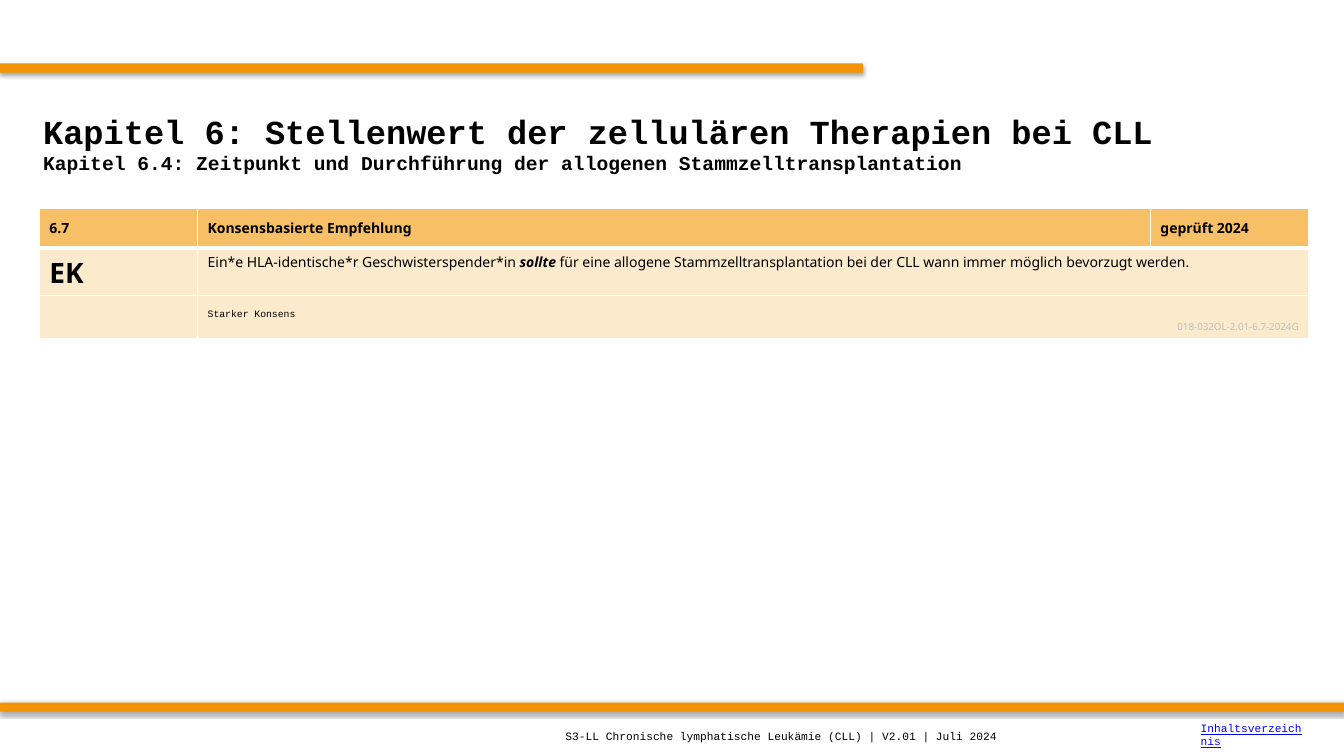
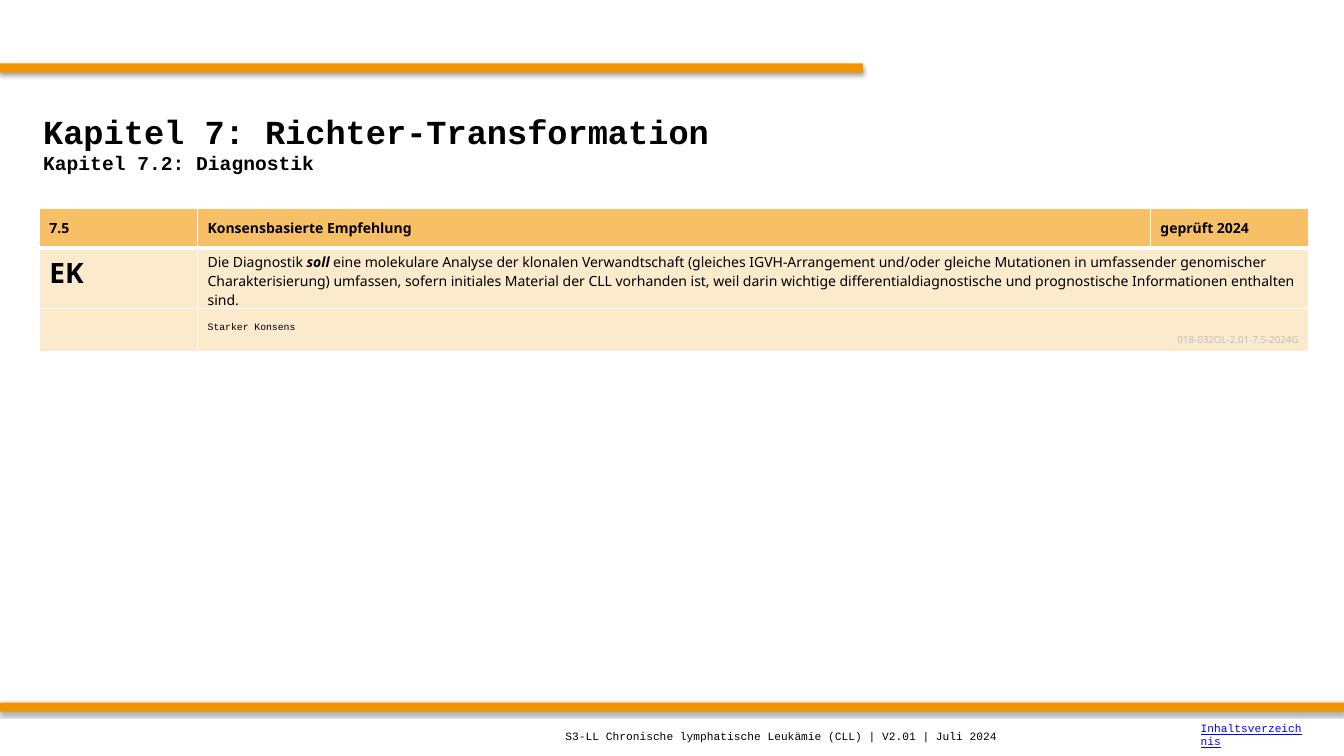
from dataclasses import dataclass, field
from typing import Any

import pptx
import pptx.dml.color
import pptx.enum.shapes
import pptx.enum.text
import pptx.oxml
import pptx.oxml.ns
import pptx.util

Inches = pptx.util.Inches
RGBColor = pptx.dml.color.RGBColor
Anchor = pptx.enum.text.MSO_ANCHOR
Align = pptx.enum.text.PP_ALIGN

# Shared colours and fonts
ORANGE = RGBColor(0xF2, 0x94, 0x00)
HEADER_ORANGE = RGBColor(0xF7, 0xBF, 0x66)
PALE_ORANGE = RGBColor(0xFC, 0xEA, 0xCC)
WHITE = RGBColor(0xFF, 0xFF, 0xFF)
BLACK = RGBColor(0x00, 0x00, 0x00)
GREY = RGBColor(0xBF, 0xBF, 0xBF)
LINK_BLUE = RGBColor(0x00, 0x00, 0xFF)
MONO = "Courier New"
SANS = "Noto Sans"

# Text formats
TITLE = {"name": MONO, "size": 24, "bold": True}
SUBTITLE = {**TITLE, "size": 14}
FOOTER = {"name": MONO, "size": 8}
LINK = {**FOOTER, "color": LINK_BLUE, "underline": True}
BODY = {"name": SANS, "size": 10, "bold": False}
HEADER = {**BODY, "bold": True}
STRENGTH = {**HEADER, "italic": True}
GRADE = {**HEADER, "size": 20}
CONSENSUS = {"name": MONO, "size": 7, "bold": False}
REFERENCE = {"name": SANS, "size": 7, "bold": False, "color": GREY}

# Table geometry
COLUMN_WIDTHS = (1.57, 9.45, 1.57)
ROW_HEIGHTS = (0.39, 0.47, 0.43)
THIN, THICK = 1, 3


@dataclass(frozen=True)
class Run:
    text: str
    style: dict[str, Any]


@dataclass(frozen=True)
class Line:
    runs: list[Run]
    alignment: Any = Align.LEFT


@dataclass(frozen=True)
class Box:
    left: float
    top: float
    width: float
    height: float

    def lengths(self) -> list[int]:
        return [Inches(n) for n in (self.left, self.top, self.width, self.height)]


@dataclass(frozen=True)
class Recommendation:
    chapter: str
    section: str
    number: str
    before: str
    strength: str
    after: str
    lines: list[Line] = field(default_factory=list)


BANDS = (Box(0, 0.63, 8.56, 0.09), Box(0, 6.97, 13.33, 0.09))
TITLE_BOX = Box(0.33, 0.83, 12.67, 1.17)
TABLE_BOX = Box(0.39, 2.07, sum(COLUMN_WIDTHS), sum(ROW_HEIGHTS))
FOOTER_BOX = Box(5.51, 7.11, 5.51, 0.39)
LINK_BOX = Box(11.81, 7.09, 1.22, 0.39)

RECOMMENDATIONS = (
    Recommendation(
        "Kapitel 6: Stellenwert der zellulären Therapien bei CLL",
        "Kapitel 6.4: Zeitpunkt und Durchführung der allogenen Stammzelltransplantation",
        "6.7",
        "Ein*e HLA-identische*r Geschwisterspender*in ",
        "sollte",
        " für eine allogene Stammzelltransplantation bei der CLL wann immer möglich "
        "bevorzugt werden.",
    ),
    Recommendation(
        "Kapitel 7: Richter-Transformation",
        "Kapitel 7.2: Diagnostik",
        "7.5",
        "Die Diagnostik ",
        "soll",
        " eine molekulare Analyse der klonalen Verwandtschaft (gleiches IGVH-Arrangement "
        "und/oder gleiche Mutationen in umfassender genomischer Charakterisierung) umfassen, "
        "sofern initiales Material der CLL vorhanden ist, weil darin wichtige "
        "differentialdiagnostische und prognostische Informationen enthalten sind.",
    ),
)


# Text
def write(text_frame: Any, lines: list[Line]) -> None:
    for index, line in enumerate(lines):
        paragraph = text_frame.paragraphs[0] if index == 0 else text_frame.add_paragraph()
        paragraph.alignment = line.alignment
        for part in line.runs:
            run = paragraph.add_run()
            run.text = part.text
            style = {"color": BLACK, **part.style}
            run.font.color.rgb = style.pop("color")
            style["size"] = pptx.util.Pt(style["size"])
            for name, value in style.items():
                setattr(run.font, name, value)


def add_text(slide: Any, box: Box, *runs: Run) -> None:
    text_frame = slide.shapes.add_textbox(*box.lengths()).text_frame
    text_frame.word_wrap = True
    text_frame.vertical_anchor = Anchor.MIDDLE
    write(text_frame, [Line([run]) for run in runs])


# Orange bands with a soft shadow below
def add_band(slide: Any, box: Box) -> None:
    shape = slide.shapes.add_shape(
        pptx.enum.shapes.MSO_SHAPE.RECTANGLE, *box.lengths())
    shape.fill.solid()
    shape.fill.fore_color.rgb = ORANGE
    shape.line.fill.background()
    shape.shadow.inherit = False
    effects = shape._element.spPr.find(pptx.oxml.ns.qn("a:effectLst"))
    effects.append(pptx.oxml.parse_xml(
        f'<a:outerShdw {pptx.oxml.ns.nsdecls("a")} blurRad="{pptx.util.Pt(3.1)}" '
        f'dist="{pptx.util.Pt(1.8)}" dir="5400000" algn="t" rotWithShape="0">'
        f'<a:srgbClr val="{BLACK}"><a:alpha val="35000"/></a:srgbClr></a:outerShdw>'))


# Recommendation table
def style_cell(cell: Any, row: int) -> None:
    edges = {"L": THIN, "R": THIN,
             "T": THICK if row == 1 else THIN,
             "B": THICK if row == 0 else THIN}
    properties = cell._tc.get_or_add_tcPr()
    for side, points in edges.items():
        properties.append(pptx.oxml.parse_xml(
            f'<a:ln{side} {pptx.oxml.ns.nsdecls("a")} w="{pptx.util.Pt(points)}">'
            f'<a:solidFill><a:srgbClr val="{WHITE}"/></a:solidFill></a:ln{side}>'))
    cell.fill.solid()
    cell.fill.fore_color.rgb = HEADER_ORANGE if row == 0 else PALE_ORANGE


def add_recommendation_table(slide: Any, item: Recommendation) -> None:
    table = slide.shapes.add_table(
        len(ROW_HEIGHTS), len(COLUMN_WIDTHS), *TABLE_BOX.lengths()).table
    table.first_row = table.horz_banding = False
    for column, width in zip(table.columns, COLUMN_WIDTHS):
        column.width = Inches(width)
    for index, height in enumerate(ROW_HEIGHTS):
        table.rows[index].height = Inches(height)
        for cell in table.rows[index].cells:
            style_cell(cell, index)
    for row in (1, 2):
        table.cell(row, 1).merge(table.cell(row, 2))

    for column, text in enumerate(
            (item.number, "Konsensbasierte Empfehlung", "geprüft 2024")):
        cell = table.cell(0, column)
        cell.vertical_anchor = Anchor.MIDDLE
        write(cell.text_frame, [Line([Run(text, HEADER)])])
    write(table.cell(1, 0).text_frame, [Line([Run("EK", GRADE)])])
    write(table.cell(1, 1).text_frame, [Line([
        Run(item.before, BODY), Run(item.strength, STRENGTH), Run(item.after, BODY)])])
    consensus = table.cell(2, 1)
    consensus.vertical_anchor = Anchor.BOTTOM
    write(consensus.text_frame, [
        Line([Run("Starker Konsens", CONSENSUS)]),
        Line([Run(f"018-032OL-2.01-{item.number}-2024G", REFERENCE)], Align.RIGHT)])


def add_recommendation_slide(presentation: Any, item: Recommendation) -> None:
    slide = presentation.slides.add_slide(presentation.slide_layouts[6])
    for band in BANDS:
        add_band(slide, band)
    add_text(slide, TITLE_BOX, Run(item.chapter, TITLE), Run(item.section, SUBTITLE))
    add_recommendation_table(slide, item)
    add_text(slide, FOOTER_BOX, Run(
        "S3-LL Chronische lymphatische Leukämie (CLL) | V2.01 | Juli 2024", FOOTER))
    add_text(slide, LINK_BOX, Run("Inhaltsverzeichnis", LINK))


def main() -> None:
    presentation = pptx.Presentation()
    presentation.slide_width = Inches(13.33)
    presentation.slide_height = Inches(7.5)
    for item in RECOMMENDATIONS:
        add_recommendation_slide(presentation, item)
    presentation.save("out.pptx")


if __name__ == "__main__":
    main()
